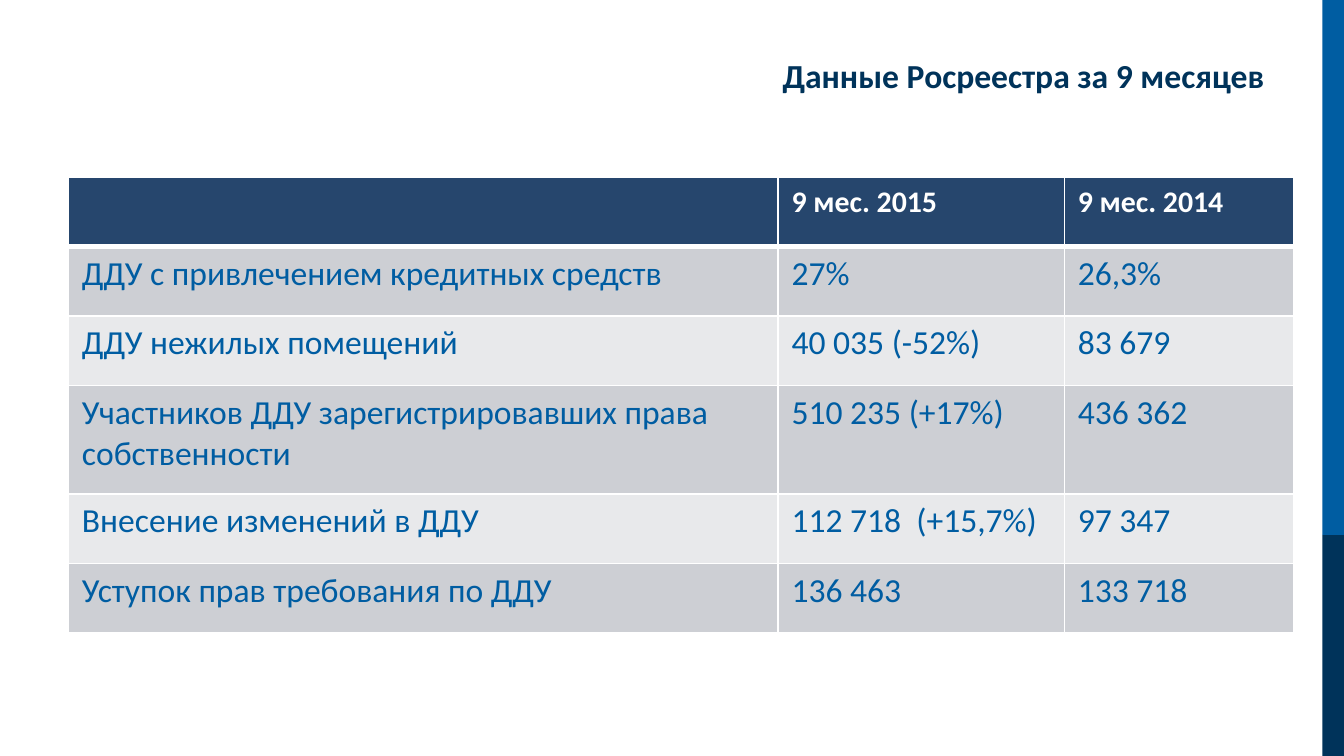
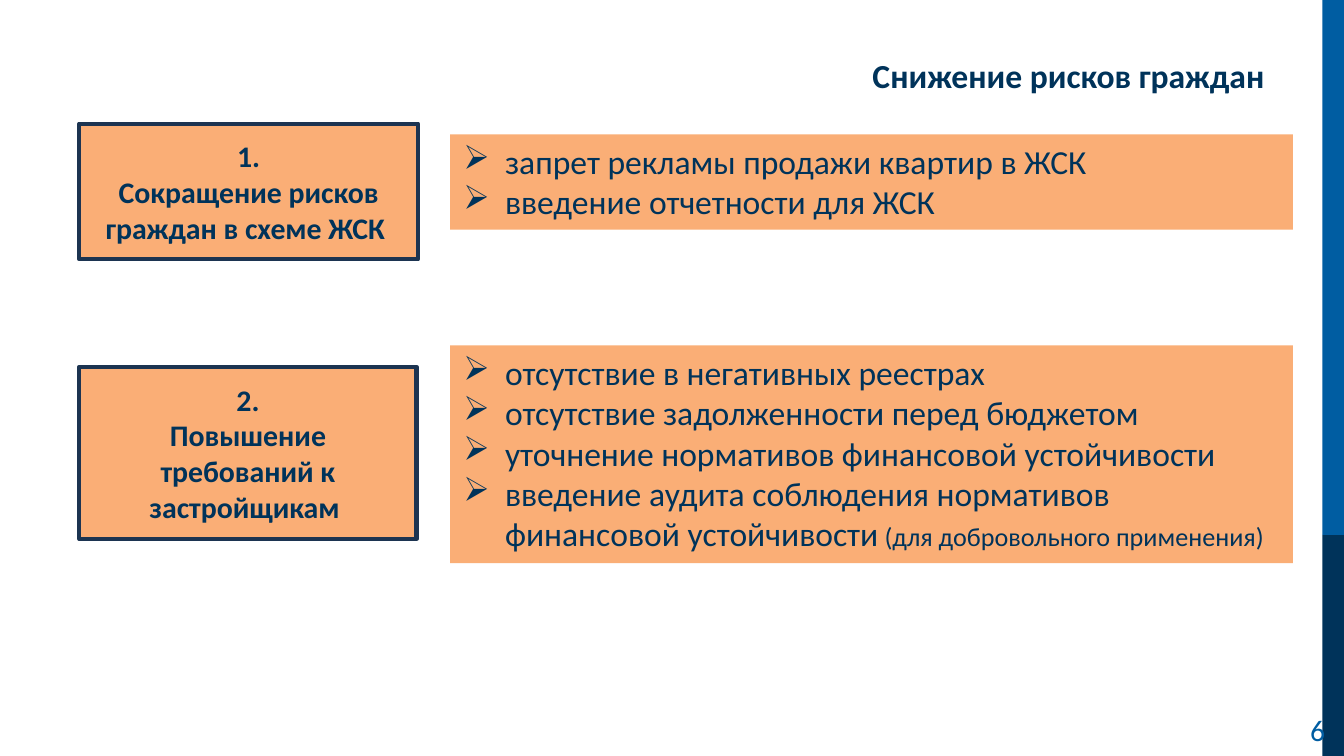
from lxml import etree
from pptx import Presentation
from pptx.dml.color import RGBColor
from pptx.enum.shapes import MSO_SHAPE
from pptx.enum.text import MSO_ANCHOR, MSO_AUTO_SIZE, PP_ALIGN
from pptx.oxml.ns import qn
from pptx.util import Inches, Pt

RECT = MSO_SHAPE.RECTANGLE
TOP, MIDDLE = MSO_ANCHOR.TOP, MSO_ANCHOR.MIDDLE
LEFT, CENTER, RIGHT = PP_ALIGN.LEFT, PP_ALIGN.CENTER, PP_ALIGN.RIGHT
FIT_SHAPE = MSO_AUTO_SIZE.SHAPE_TO_FIT_TEXT

NAVY = RGBColor(0x00, 0x33, 0x5A)
BLUE = RGBColor(0x00, 0x5D, 0xA2)
HEADER = RGBColor(0x26, 0x46, 0x6D)
OUTLINE = RGBColor(0x1C, 0x34, 0x51)
ORANGE = RGBColor(0xFA, 0xAE, 0x76)
WHITE = RGBColor(0xFF, 0xFF, 0xFF)
ROW_DARK = RGBColor(0xCD, 0xCF, 0xD4)
ROW_LIGHT = RGBColor(0xE8, 0xE9, 0xEB)

FONT = "Calibri"
BULLET = "➢"
INDENT = Inches(0.31)


class Deck:
    """Holds the shared style and the current slide."""

    def __init__(self):
        self.prs = Presentation()
        self.prs.slide_width = Inches(10)
        self.prs.slide_height = Inches(10 * 9 / 16)
        self.s = None

    def slide(self, title):
        self.s = self.prs.slides.add_slide(self.prs.slide_layouts[6])
        # Side band
        self.rect(9.84, 3.98, 0.16, 1.65, NAVY)
        self.rect(9.84, 0, 0.16, 3.98, BLUE)
        # Title
        tf = self.text_box(2.02, 0.23, 7.48, 0.66)
        tf.vertical_anchor = MIDDLE
        tf.margin_left = tf.margin_right = Inches(0.09)
        tf.margin_top = tf.margin_bottom = Inches(0.04)
        self.run(self.align(tf.paragraphs[0], RIGHT), title, 18, NAVY, True)

    def rect(self, x, y, w, h, fill, line=None):
        sp = self.s.shapes.add_shape(
            RECT, Inches(x), Inches(y), Inches(w), Inches(h))
        sp.shadow.inherit = False
        sp.fill.solid()
        sp.fill.fore_color.rgb = fill
        if line is None:
            sp.line.fill.background()
        else:
            sp.line.color.rgb = line
            sp.line.width = Pt(2.25)
        return sp.text_frame

    def text_box(self, x, y, w, h, wrap=True):
        tf = self.s.shapes.add_textbox(
            Inches(x), Inches(y), Inches(w), Inches(h)).text_frame
        tf.word_wrap = wrap
        return tf

    def align(self, p, alignment):
        p.alignment = alignment
        return p

    def run(self, p, text, size, color, bold=False):
        r = p.add_run()
        r.text = text
        r.font.name = FONT
        r.font.size = Pt(size)
        r.font.bold = bold
        r.font.color.rgb = color

    def paragraphs(self, tf, count):
        for _ in range(count - 1):
            tf.add_paragraph()
        return tf.paragraphs

    def page_number(self, number):
        tf = self.text_box(9.65, 5.25, 0.32, 0.37, wrap=False)
        tf.auto_size = FIT_SHAPE
        self.run(tf.paragraphs[0], number, 16, BLUE)

    def heading_box(self, x, y, w, h, lines):
        tf = self.rect(x, y, w, h, ORANGE, OUTLINE)
        tf.vertical_anchor = MIDDLE
        for p, line in zip(self.paragraphs(tf, len(lines)), lines):
            self.run(self.align(p, CENTER), line, 16, NAVY, True)

    def bullet_box(self, x, y, w, h, items):
        """Each item is a list of (text, size) runs."""
        tf = self.rect(x, y, w, h, ORANGE)
        tf.vertical_anchor = TOP
        tf.auto_size = FIT_SHAPE
        for p, item in zip(self.paragraphs(tf, len(items)), items):
            self.align(p, LEFT)
            for text, size in item:
                self.run(p, text, size, NAVY)
            # Bullet with a hanging indent
            pPr = p._p.get_or_add_pPr()
            pPr.set("marL", str(INDENT))
            pPr.set("indent", str(-INDENT))
            etree.SubElement(pPr, qn("a:buChar"), char=BULLET)

    def cell_borders(self, cell, bottom):
        tcPr = cell._tc.get_or_add_tcPr()
        widths = {"a:lnL": 1, "a:lnR": 1, "a:lnT": 1, "a:lnB": bottom}
        for i, (tag, width) in enumerate(widths.items()):
            ln = etree.Element(qn(tag), w=str(Pt(width)))
            fill = etree.SubElement(ln, qn("a:solidFill"))
            etree.SubElement(fill, qn("a:srgbClr"), val=str(WHITE))
            tcPr.insert(i, ln)

    def table(self, x, y, col_widths, row_heights, rows):
        table = self.s.shapes.add_table(
            len(rows), len(col_widths), Inches(x), Inches(y),
            Inches(sum(col_widths)), Inches(sum(row_heights))).table
        for col, width in zip(table.columns, col_widths):
            col.width = Inches(width)
        for i, (height, texts) in enumerate(zip(row_heights, rows)):
            table.rows[i].height = Inches(height)
            head = i == 0
            band = HEADER if head else ROW_DARK if i % 2 else ROW_LIGHT
            for cell, text in zip(table.rows[i].cells, texts):
                cell.fill.solid()
                cell.fill.fore_color.rgb = band
                self.cell_borders(cell, bottom=3 if head else 1)
                if text:
                    self.run(cell.text_frame.paragraphs[0], text,
                             16 if head else 18, WHITE if head else BLUE, head)


def main():
    deck = Deck()

    # Slide 1: registry figures, one row is two lines high
    deck.slide("Данные Росреестра за 9 месяцев")
    tall = 0.81
    single = (3.39 - tall) / 5
    heights = [single] * 3 + [tall] + [single] * 2
    deck.table(0.51, 1.32, [5.28, 2.13, 1.71], heights, [
        ["", "9 мес. 2015", "9 мес. 2014"],
        ["ДДУ с привлечением кредитных средств", "27%", "26,3%"],
        ["ДДУ нежилых помещений", "40 035 (-52%)", "83 679"],
        ["Участников ДДУ зарегистрировавших права собственности",
         "510 235 (+17%)", "436 362"],
        ["Внесение изменений в ДДУ", "112 718  (+15,7%)", "97 347"],
        ["Уступок прав требования по ДДУ", "136 463", "133 718"],
    ])

    # Slide 2: measures that lower the risks
    deck.slide("Снижение рисков граждан")
    deck.page_number("6")
    deck.heading_box(0.59, 0.92, 2.52, 1.01,
                     ["1.", "Сокращение рисков граждан в схеме ЖСК "])
    deck.bullet_box(3.35, 2.57, 6.27, 1.62, [
        [("отсутствие в негативных реестрах", 18)],
        [("отсутствие задолженности перед бюджетом", 18)],
        [("уточнение нормативов финансовой устойчивости", 18)],
        [("введение аудита соблюдения нормативов финансовой устойчивости", 18),
         (" (для добровольного применения)", 14)],
    ])
    deck.bullet_box(3.35, 1, 6.27, 0.71, [
        [("запрет рекламы продажи квартир в ЖСК", 18)],
        [("введение отчетности для ЖСК", 18)],
    ])
    deck.heading_box(0.59, 2.73, 2.51, 1.28,
                     ["2.", "Повышение требований к застройщикам "])

    deck.prs.save("out.pptx")


if __name__ == "__main__":
    main()
